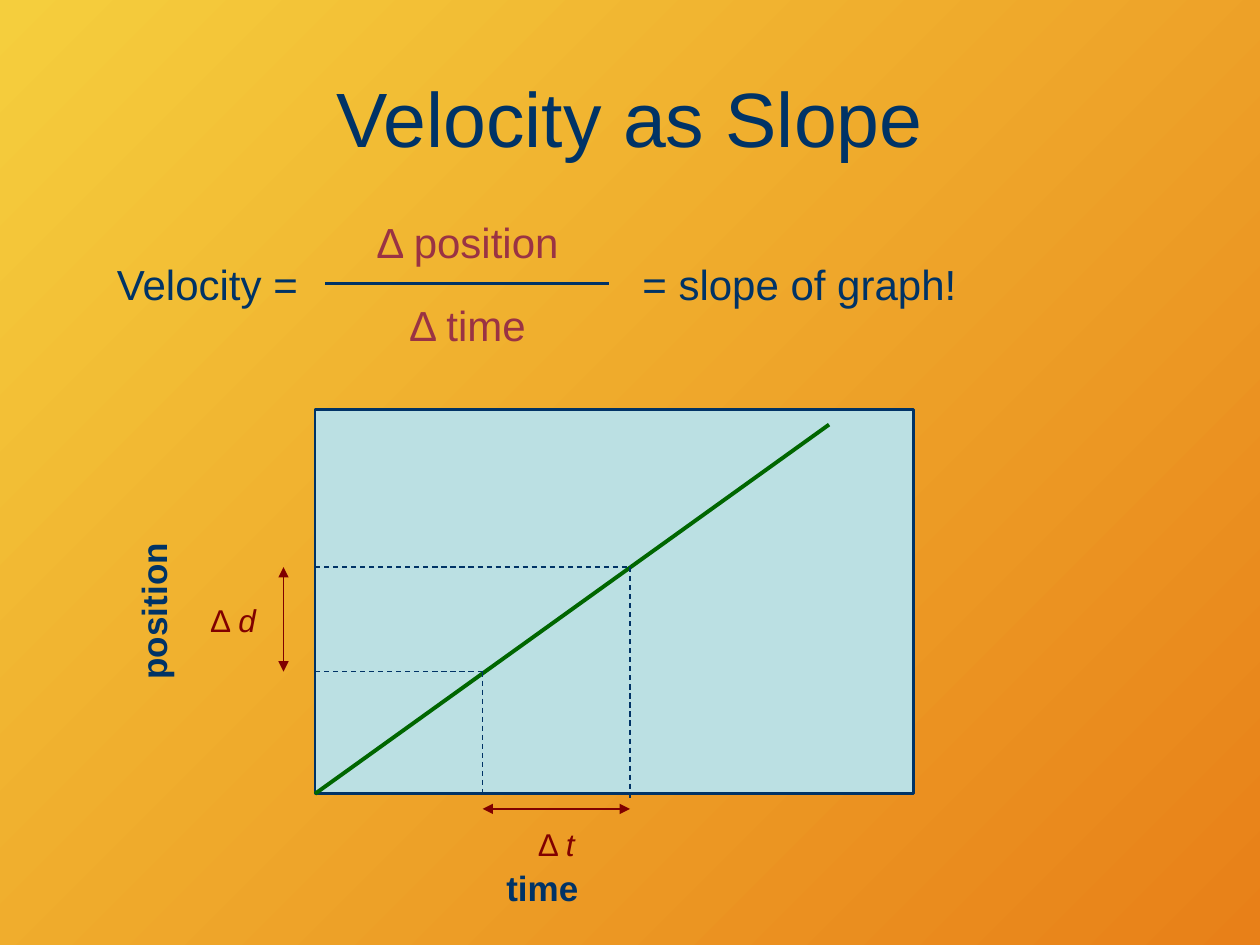
from lxml import etree
from pptx import Presentation
from pptx.dml.color import RGBColor
from pptx.enum.dml import MSO_LINE
from pptx.enum.shapes import MSO_CONNECTOR, MSO_SHAPE
from pptx.enum.text import MSO_ANCHOR, PP_ALIGN
from pptx.oxml.ns import qn
from pptx.util import Inches, Pt

DASH = MSO_LINE.DASH
STRAIGHT = MSO_CONNECTOR.STRAIGHT
RECTANGLE = MSO_SHAPE.RECTANGLE
MIDDLE = MSO_ANCHOR.MIDDLE
LEFT, CENTER = PP_ALIGN.LEFT, PP_ALIGN.CENTER

FONT = "Arial"
COLORS = {
    "navy": "003366",
    "rose": "9A3344",
    "maroon": "800000",
    "green": "006600",
    "plot": "BBE0E3",
    "yellow": "F5CE3D",
    "orange": "E88018",
}
COLORS = {name: RGBColor.from_string(value) for name, value in COLORS.items()}

prs = Presentation()
prs.slide_width, prs.slide_height = Inches(10), Inches(7.5)
slide = prs.slides.add_slide(prs.slide_layouts[5])


def write(frame, runs, size, color, align=LEFT, bold=False):
    """Fill the first paragraph with (text, italic) runs."""
    paragraph = frame.paragraphs[0]
    paragraph.alignment = align
    for text, italic in runs:
        run = paragraph.add_run()
        run.text = text
        run.font.name, run.font.size = FONT, Pt(size)
        run.font.bold, run.font.italic = bold, italic
        run.font.color.rgb = COLORS[color]


def draw_line(x1, y1, x2, y2, color, width, dashed=False, arrows=False):
    line = slide.shapes.add_connector(
        STRAIGHT, Inches(x1), Inches(y1), Inches(x2), Inches(y2))
    line.line.color.rgb = COLORS[color]
    line.line.width = Pt(width)
    if dashed:
        line.line.dash_style = DASH
    if arrows:
        for end in ("a:headEnd", "a:tailEnd"):
            etree.SubElement(line.line._get_or_add_ln(), qn(end), type="triangle")
    etree.SubElement(line._element.spPr, qn("a:effectLst"))


# Background
background = slide.background.fill
background.gradient()
background.gradient_angle = 315
for stop, name in zip(background.gradient_stops, ("yellow", "orange")):
    stop.color.rgb = COLORS[name]

# Title
title = slide.shapes.title
title.left, title.top = Inches(0.5), Inches(0.3)
title.width, title.height = Inches(9), Inches(1.25)
title.text_frame.vertical_anchor = MIDDLE
write(title.text_frame, [("Velocity as Slope", False)], 44, "navy", CENTER)

# Position-time graph
plot_left, plot_top, plot_width, plot_height = 2.5, 3.25, 4.75, 3.05
plot_bottom = plot_top + plot_height
plot = slide.shapes.add_shape(
    RECTANGLE, Inches(plot_left), Inches(plot_top), Inches(plot_width), Inches(plot_height))
plot.shadow.inherit = False
plot.fill.solid()
plot.fill.fore_color.rgb = COLORS["plot"]
plot.line.color.rgb = COLORS["navy"]
plot.line.width = Pt(1.5)
draw_line(plot_left, plot_bottom, 6.58, 3.37, "green", 2.25)

# Guides from two points on the graph to both axes, and the intervals between
(t1, d1), (t2, d2) = points = [(3.83, 5.33), (5, 4.5)]
for t, d in points:
    draw_line(plot_left, d, t, d, "navy", 0.75, dashed=True)
    draw_line(t, d, t, 6.33, "navy", 0.75, dashed=True)
draw_line(2.25, d2, 2.25, d1, "maroon", 0.75, arrows=True)
draw_line(t1, 6.42, t2, 6.42, "maroon", 0.75, arrows=True)

# Fraction bar
draw_line(2.58, 2.25, 4.83, 2.25, "navy", 2.25)

# Formula and axis labels: runs, left, top, width, height, size, color, align, bold, rotation
labels = [
    ([("Velocity =", False)], 0.83, 2, 1.67, 0.5, 24, "navy", LEFT, False, 0),
    ([("Δ position", False)], 2.75, 1.67, 1.92, 0.5, 24, "rose", CENTER, False, 0),
    ([("Δ time", False)], 2.75, 2.33, 1.92, 0.5, 24, "rose", CENTER, False, 0),
    ([("= slope of graph!", False)], 5, 2, 2.75, 0.5, 24, "navy", LEFT, False, 0),
    ([("position", False)], 0.51, 4.57, 1.41, 0.43, 20, "navy", LEFT, True, 270),
    ([("time", False)], 3.92, 6.83, 0.92, 0.43, 20, "navy", LEFT, True, 0),
    ([("Δ ", False), ("d", True)], 1.57, 4.72, 0.56, 0.4, 18, "maroon", LEFT, False, 0),
    ([("Δ ", False), ("t", True)], 4.17, 6.5, 0.49, 0.4, 18, "maroon", LEFT, False, 0),
]
for runs, left, top, width, height, size, color, align, bold, rotation in labels:
    label = slide.shapes.add_textbox(Inches(left), Inches(top), Inches(width), Inches(height))
    label.rotation = rotation
    label.text_frame.word_wrap = size > 18
    write(label.text_frame, runs, size, color, align, bold)

prs.save("out.pptx")
